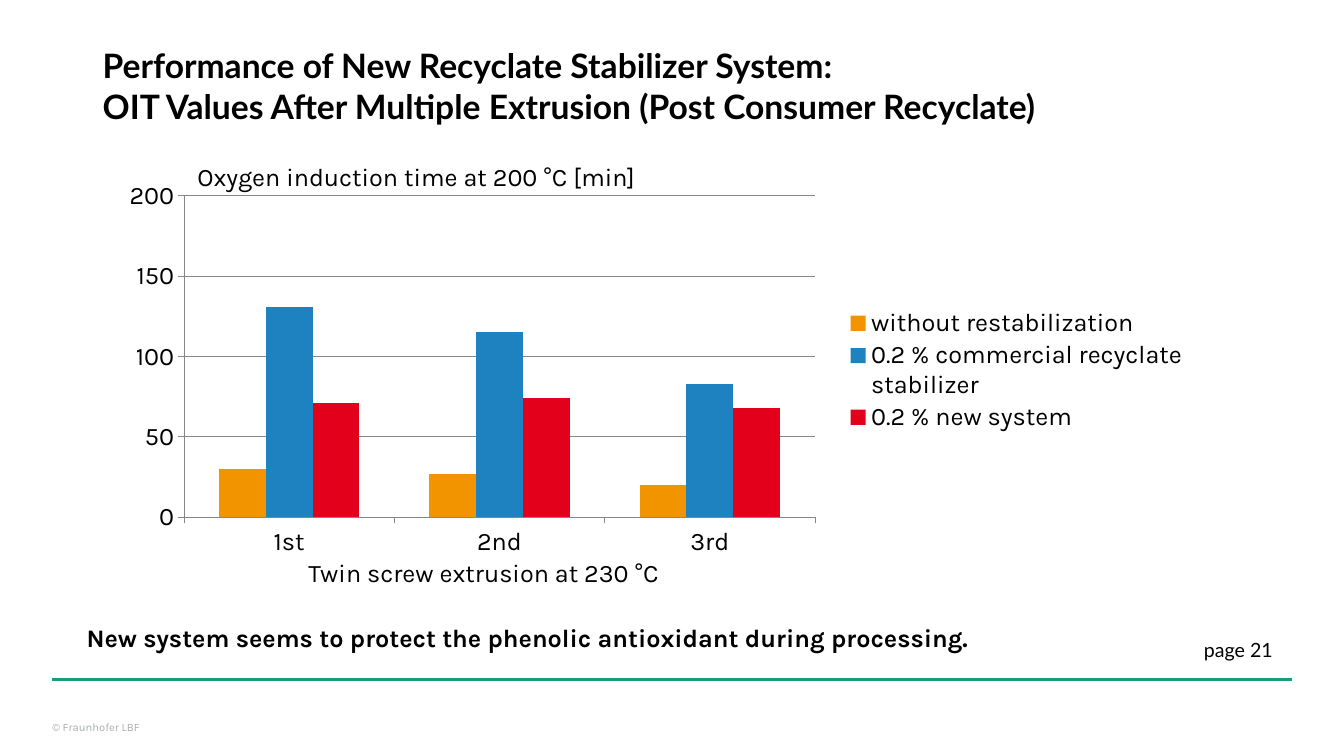
from lxml import etree
from pptx import Presentation
from pptx.chart.data import CategoryChartData
from pptx.dml.color import RGBColor
from pptx.enum.chart import XL_CHART_TYPE, XL_LEGEND_POSITION, XL_TICK_MARK
from pptx.enum.shapes import MSO_CONNECTOR
from pptx.enum.text import MSO_ANCHOR
from pptx.oxml import parse_xml
from pptx.oxml.ns import nsdecls, qn
from pptx.util import Inches, Pt

COLUMNS = XL_CHART_TYPE.COLUMN_CLUSTERED
RIGHT = XL_LEGEND_POSITION.RIGHT
OUTSIDE = XL_TICK_MARK.OUTSIDE
TOP, BOTTOM = MSO_ANCHOR.TOP, MSO_ANCHOR.BOTTOM
BLACK, GREY, AXIS_GREY, GREEN = "000000", "A8AFAF", "868686", "179C7D"
BODY, HEADING = "Karla", "Lato"

deck = Presentation()
deck.slide_width, deck.slide_height = Inches(13.33), Inches(7.5)
page = deck.slides.add_slide(deck.slide_layouts[6])


def place(*shares):
    """Turn alternating x and y percentages of the slide into lengths."""
    sides = (deck.slide_width, deck.slide_height) * 2
    return [round(side * share / 100) for side, share in zip(sides, shares)]


def add_text(text, shares, size=18, font=BODY, color=BLACK, bold=False,
             anchor=TOP, inset=True):
    frame = page.shapes.add_textbox(*place(*shares)).text_frame
    frame.word_wrap = True
    frame.vertical_anchor = anchor
    if not inset:
        frame.margin_left = frame.margin_right = 0
        frame.margin_top = frame.margin_bottom = 0
    frame.text = text
    for para in frame.paragraphs:
        for span in para.runs:
            span.font.name, span.font.size, span.font.bold = font, Pt(size), bold
            span.font.color.rgb = RGBColor.from_string(color)


# Footer
add_text("© Fraunhofer LBF", (3.9, 92.53, 14.78, 4.53), size=8, color=GREY,
         anchor=BOTTOM, inset=False)
rule = page.shapes.add_connector(MSO_CONNECTOR.STRAIGHT, *place(3.9, 89.87, 96.1, 89.87))
rule.line.color.rgb = RGBColor.from_string(GREEN)
rule.line.width = Pt(2.5)
etree.SubElement(rule._element.spPr, qn("a:effectLst"))
add_text("page 21", (89.57, 84.27, 6.08, 3.2), size=14, font=HEADING,
         anchor=BOTTOM, inset=False)

# Title and conclusion
add_text("Performance of New Recyclate Stabilizer System:\n"
         "OIT Values After Multiple Extrusion (Post Consumer Recyclate)",
         (6.9, 5.33, 75.24, 12.13), size=24, font=HEADING, bold=True)
add_text("New system seems to protect the phenolic antioxidant during processing.",
         (5.7, 81.6, 74.42, 5.33), bold=True)

# Chart
induction_times = [
    ("without restabilization", (30, 27, 20), "F29400"),
    ("0.2 % commercial recyclate stabilizer", (131, 115, 83), "1F82C0"),
    ("0.2 % new system", (71, 74, 68), "E2001A"),
]
data = CategoryChartData(number_format="#,##0")
data.categories = ["1st", "2nd", "3rd"]
for name, values, color in induction_times:
    data.add_series(name, values)
chart = page.shapes.add_chart(COLUMNS, *place(8.03, 22.8, 80.95, 51.87), data).chart
chart.has_title = False
chart.font.name, chart.font.size = BODY, Pt(18)
chart.font.color.rgb = RGBColor.from_string(BLACK)

plot = chart.plots[0]
plot.gap_width, plot.overlap = 150, 0
plot.vary_by_categories = False
for series, (name, values, color) in zip(plot.series, induction_times):
    series.format.fill.solid()
    series.format.fill.fore_color.rgb = RGBColor.from_string(color)

value_axis, category_axis = chart.value_axis, chart.category_axis
value_axis.minimum_scale, value_axis.maximum_scale = 0, 200
value_axis.major_unit = 50
value_axis.has_major_gridlines = True
for axis in (value_axis, category_axis):
    axis.major_tick_mark = OUTSIDE
for part in (value_axis, category_axis, value_axis.major_gridlines):
    part.format.line.color.rgb = RGBColor.from_string(AXIS_GREY)
    part.format.line.width = Pt(0.75)

chart.has_legend = True
chart.legend.position = RIGHT
chart.legend.include_in_layout = False

# Fixed places for the plot and the legend, as shares of the chart
plot_area = chart._chartSpace.chart.plotArea
legend = chart.legend._element
for element, target, shares in (
    (plot_area, '<c:layoutTarget val="inner"/>', (0.07, 0.06, 0.58, 0.82)),
    (legend, "", (0.67, 0.34, 0.33, 0.33)),
):
    for previous in element.findall(qn("c:layout")):
        element.remove(previous)
    modes = '<c:xMode val="edge"/><c:yMode val="edge"/>'
    sizes = "".join(f'<c:{key} val="{share}"/>' for key, share in zip("xywh", shares))
    layout = parse_xml(f'<c:layout {nsdecls("c")}><c:manualLayout>{target}{modes}{sizes}'
                       "</c:manualLayout></c:layout>")
    element.insert(1 if element is legend else 0, layout)

# Axis captions
add_text("Oxygen induction time at 200 °C [min]", (13.95, 20.67, 35.33, 5.33))
add_text("Twin screw extrusion at 230 °C", (22.2, 73.07, 28.88, 5.33))

deck.save("out.pptx")
